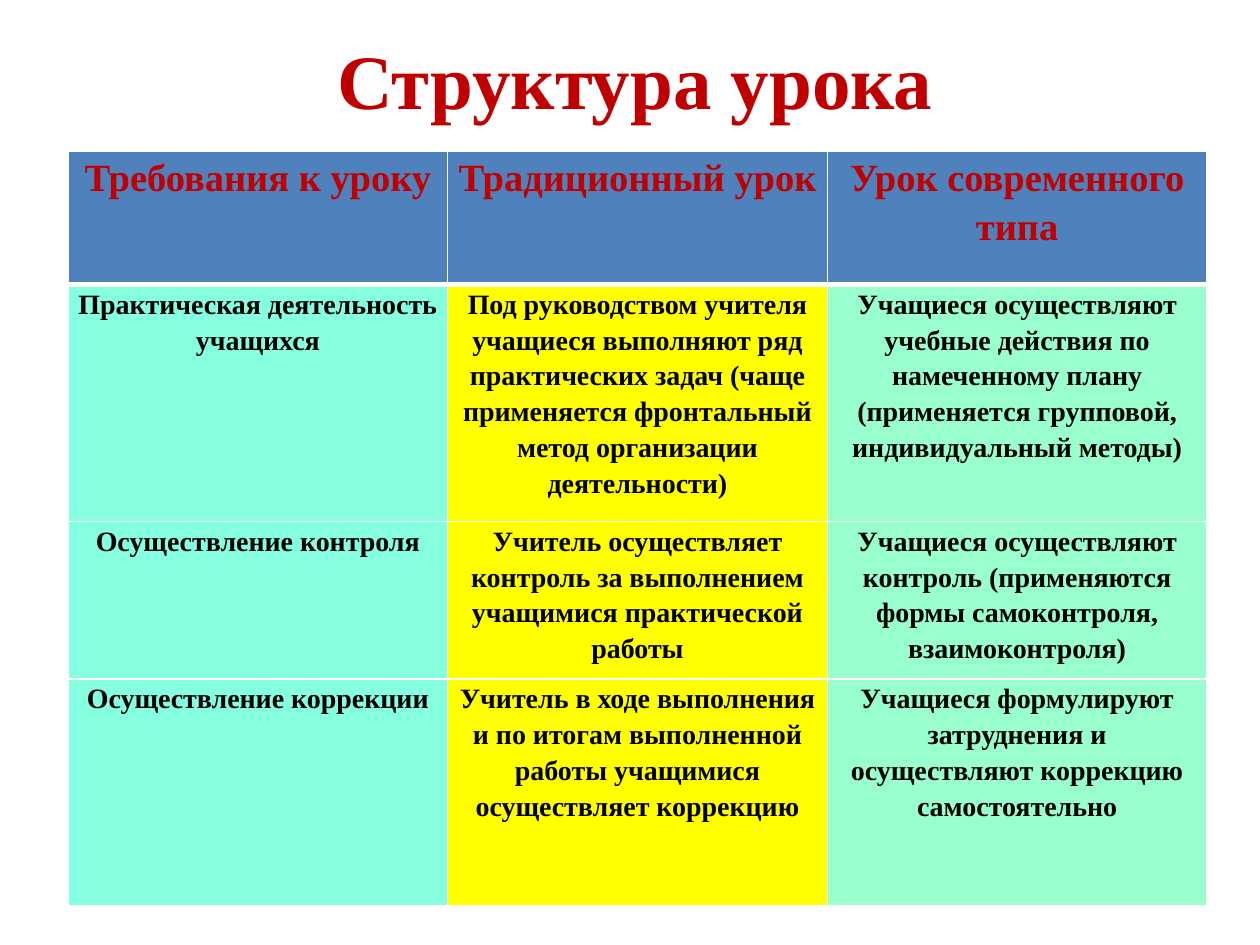
from lxml.etree import SubElement
from pptx import Presentation
from pptx.dml.color import RGBColor
from pptx.enum.text import MSO_ANCHOR, PP_ALIGN
from pptx.oxml.ns import qn
from pptx.util import Inches, Pt

FONT = "Times New Roman"
COLORS = {
    "accent": "C00000",
    "body": "000000",
    "border": "FFFFFF",
    "header": "4F81BD",
    "requirement": "85FFE0",
    "traditional": "FFFF00",
    "modern": "99FFCC",
}
COLUMN_FILLS = ["requirement", "traditional", "modern"]
ROW_HEIGHTS = [1.06, 1.88, 1.25, 1.8]
LESSONS = [
    ["Требования к уроку", "Традиционный урок", "Урок современного типа"],
    ["Практическая деятельность учащихся",
     "Под руководством учителя учащиеся выполняют ряд практических задач "
     "(чаще применяется фронтальный метод организации деятельности)",
     "Учащиеся осуществляют учебные действия по намеченному плану "
     "(применяется групповой, индивидуальный методы)"],
    ["Осуществление контроля",
     "Учитель осуществляет контроль за выполнением учащимися практической работы",
     "Учащиеся осуществляют контроль (применяются формы самоконтроля, взаимоконтроля)"],
    ["Осуществление коррекции",
     "Учитель в ходе выполнения и по итогам выполненной работы учащимися "
     "осуществляет коррекцию",
     "Учащиеся формулируют затруднения и осуществляют коррекцию самостоятельно"],
]


def color(name):
    return RGBColor.from_string(COLORS[name])


def add_bold_run(paragraph, text, size, color_name):
    paragraph.alignment = PP_ALIGN.CENTER
    run = paragraph.add_run()
    run.text = text
    run.font.name = FONT
    run.font.size = Pt(size)
    run.font.bold = True
    run.font.color.rgb = color(color_name)


def set_borders(cell, top, bottom):
    properties = cell._tc.get_or_add_tcPr()
    for side, width in (("L", 1), ("R", 1), ("T", top), ("B", bottom)):
        line = SubElement(properties, qn(f"a:ln{side}"), w=str(Pt(width)))
        fill = SubElement(line, qn("a:solidFill"))
        SubElement(fill, qn("a:srgbClr"), val=COLORS["border"])


def add_title(slide, left, top, width, height):
    frame = slide.shapes.add_textbox(left, top, width, height).text_frame
    frame.word_wrap = True
    frame.vertical_anchor = MSO_ANCHOR.MIDDLE
    add_bold_run(frame.paragraphs[0], "Структура урока", 44, "accent")


def fill_cell(cell, text, size, text_color, fill_name):
    cell.margin_left = cell.margin_right = Inches(0.07)
    cell.margin_top = cell.margin_bottom = 0
    cell.fill.solid()
    cell.fill.fore_color.rgb = color(fill_name)
    paragraph = cell.text_frame.paragraphs[0]
    paragraph.line_spacing = 1.15
    paragraph.space_after = Pt(10)
    # Slight hanging first line
    properties = paragraph._p.get_or_add_pPr()
    properties.set("marL", "0")
    properties.set("indent", str(Inches(-0.1)))
    add_bold_run(paragraph, text, size, text_color)


def add_lesson_table(slide, left, top, width, height):
    table = slide.shapes.add_table(
        len(LESSONS), len(COLUMN_FILLS), left, top, width, height).table
    for row, row_height in zip(table.rows, ROW_HEIGHTS):
        row.height = Inches(row_height)
    for r, texts in enumerate(LESSONS):
        for c, text in enumerate(texts):
            cell = table.cell(r, c)
            # A thick rule separates the header from the body
            set_borders(cell, top=3 if r == 1 else 1, bottom=3 if r == 0 else 1)
            if r == 0:
                fill_cell(cell, text, 22, "accent", "header")
            else:
                fill_cell(cell, text, 16, "body", COLUMN_FILLS[c])


def main():
    prs = Presentation()
    prs.slide_width, prs.slide_height = Inches(10), Inches(7.5)
    slide = prs.slides.add_slide(prs.slide_layouts[6])
    left = Inches(0.54)
    add_title(slide, left, 0, Inches(9), Inches(1.25))
    add_lesson_table(slide, left, Inches(1.2), Inches(9.04), Inches(sum(ROW_HEIGHTS)))
    prs.save("out.pptx")


if __name__ == "__main__":
    main()
